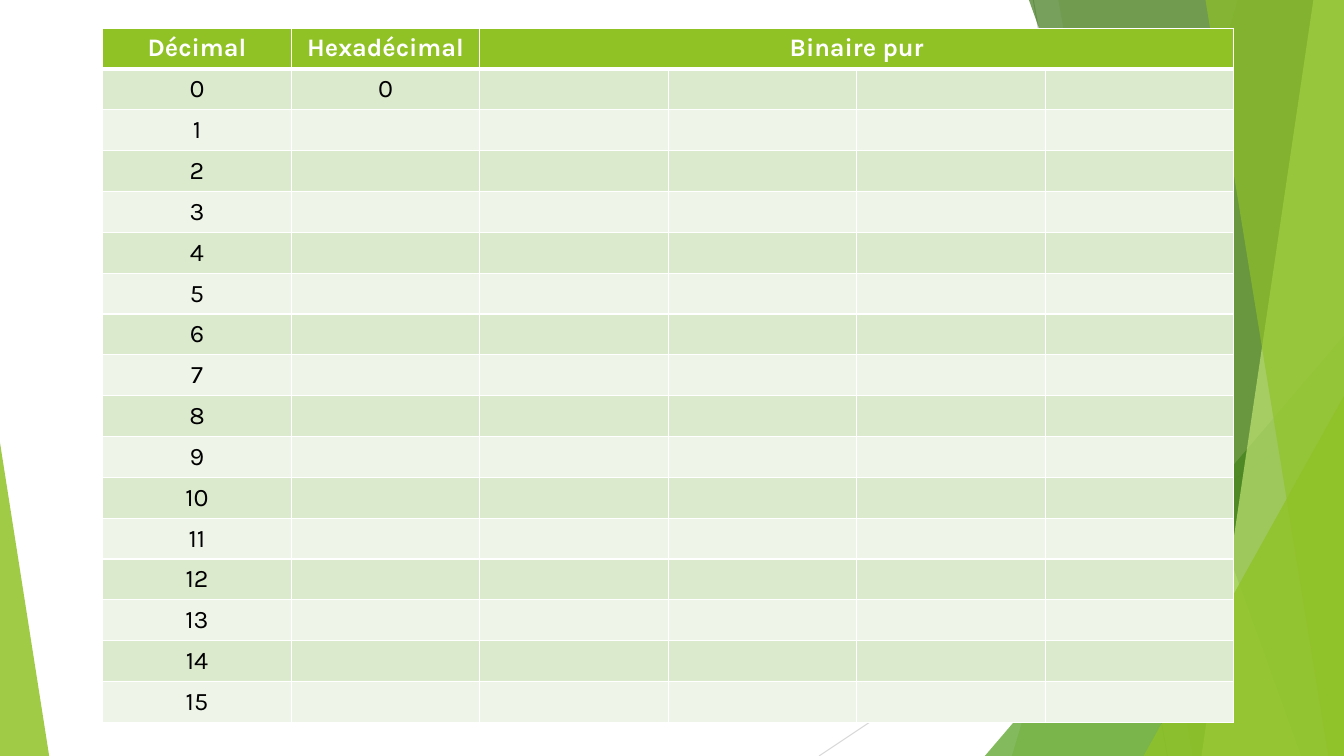
import pptx
import pptx.dml.color
import pptx.enum.shapes
import pptx.enum.text
import pptx.oxml
import pptx.oxml.ns
import pptx.util
from pptx.util import Cm

COLORS = {
    "white": "FFFFFF", "black": "000000", "lime": "90C226", "green": "54A021",
    "forest": "3F7819", "pale": "C0E474", "grey": "BFBFBF", "silver": "D9D9D9",
    "band_dark": "DBE9CD", "band_light": "EEF4E8",
}
FONT = "Karla"
SLIDE_WIDTH, SLIDE_HEIGHT = 33.87, 19.05
HEADERS = ["Décimal", "Hexadécimal", "Binaire pur"]
COLUMN_COUNT = 6
VALUE_COUNT = 16


def rgb(name):
    return pptx.dml.color.RGBColor.from_string(COLORS[name])


def paint(shape, color, opacity):
    shape.shadow.inherit = False
    shape.fill.solid()
    shape.fill.fore_color.rgb = rgb(color)
    shape.line.fill.background()
    fill_color = shape.fill._xPr.find(".//" + pptx.oxml.ns.qn("a:srgbClr"))
    alpha = pptx.oxml.ns.qn("a:alpha")
    fill_color.append(fill_color.makeelement(alpha, {"val": str(opacity * 1000)}))


def add_line(slide, start, end, color):
    connector = slide.shapes.add_connector(
        pptx.enum.shapes.MSO_CONNECTOR.STRAIGHT, *map(Cm, start + end))
    connector.line.color.rgb = rgb(color)
    connector.line.width = pptx.util.Pt(0.75)
    properties = connector._element.spPr
    properties.append(properties.makeelement(pptx.oxml.ns.qn("a:effectLst"), {}))


def add_triangle(slide, box, apex, color, opacity):
    triangle = slide.shapes.add_shape(
        pptx.enum.shapes.MSO_SHAPE.ISOSCELES_TRIANGLE, *map(Cm, box))
    triangle.adjustments[0] = apex
    paint(triangle, color, opacity)


def add_right_facets(slide, right, top, height):
    bottom = top + height
    add_line(slide, (right - 7.83, top), (right - 4.45, bottom), "grey")
    add_line(slide, (right, top + 10.24), (right - 13.23, bottom), "silver")

    def add_blade(top_width, bottom_width, color, opacity):
        builder = slide.shapes.build_freeform(Cm(right - top_width), Cm(top))
        corners = [(right, top), (right, bottom), (right - bottom_width, bottom)]
        builder.add_line_segments([(Cm(x), Cm(y)) for x, y in corners], close=True)
        paint(builder.convert_to_shape(), color, opacity)

    def add_corner(width, corner_height, color, opacity):
        box = (right - width, bottom - corner_height, width, corner_height)
        add_triangle(slide, box, 1, color, opacity)

    add_blade(2.68, 8.37, "lime", 30)
    add_blade(7.2, 3.82, "lime", 20)
    add_corner(9.05, 10.59, "green", 72)
    add_blade(7.94, 1.08, "forest", 70)
    add_blade(0.77, 3.59, "pale", 70)
    add_blade(3.49, 0.39, "lime", 65)
    add_corner(5.05, 9.07, "lime", 80)


def add_left_facet(slide, left, bottom, width, height):
    add_triangle(slide, (left, bottom - height, width, height), 0, "lime", 85)


def set_borders(cell, top_width, bottom_width):
    widths = {"L": 1, "R": 1, "T": top_width, "B": bottom_width}
    properties = cell._tc.get_or_add_tcPr()
    for position, (side, width) in enumerate(widths.items()):
        properties.insert(position, pptx.oxml.parse_xml(
            f'<a:ln{side} {pptx.oxml.ns.nsdecls("a")} w="{pptx.util.Pt(width)}">'
            f'<a:solidFill><a:srgbClr val="{COLORS["white"]}"/></a:solidFill>'
            f'</a:ln{side}>'))


def write_cell(cell, text, color, bold):
    paragraph = cell.text_frame.paragraphs[0]
    paragraph.alignment = pptx.enum.text.PP_ALIGN.CENTER
    run = paragraph.add_run()
    run.text = text
    run.font.name = FONT
    run.font.size = pptx.util.Pt(18)
    run.font.bold = bold
    run.font.color.rgb = rgb(color)


def add_conversion_table(slide, left, top, width, height):
    row_count = VALUE_COUNT + 1
    table = slide.shapes.add_table(
        row_count, COLUMN_COUNT, *map(Cm, (left, top, width, height))).table
    for column in table.columns:
        column.width = Cm(width / COLUMN_COUNT)
    for index, row in enumerate(table.rows):
        row.height = Cm(height / row_count)
        band = "lime" if index == 0 else "band_dark" if index % 2 else "band_light"
        for cell in row.cells:
            cell.fill.solid()
            cell.fill.fore_color.rgb = rgb(band)
            cell.margin_top = cell.margin_bottom = Cm(0.1)
            cell.vertical_anchor = pptx.enum.text.MSO_ANCHOR.MIDDLE
            set_borders(cell, 3 if index == 1 else 1, 3 if index == 0 else 1)
    table.cell(0, 2).merge(table.cell(0, COLUMN_COUNT - 1))
    for column, header in enumerate(HEADERS):
        write_cell(table.cell(0, column), header, "white", True)
    for value in range(VALUE_COUNT):
        write_cell(table.cell(value + 1, 0), str(value), "black", False)
    write_cell(table.cell(1, 1), "0", "black", False)


def main():
    presentation = pptx.Presentation()
    presentation.slide_width = Cm(SLIDE_WIDTH)
    presentation.slide_height = Cm(SLIDE_HEIGHT)
    slide = presentation.slides.add_slide(presentation.slide_layouts[6])
    add_right_facets(slide, SLIDE_WIDTH, 0, SLIDE_HEIGHT)
    add_left_facet(slide, 0, SLIDE_HEIGHT, 1.24, 7.9)
    add_conversion_table(slide, 2.59, 0.71, 28.5, 17.5)
    presentation.save("out.pptx")


if __name__ == "__main__":
    main()
